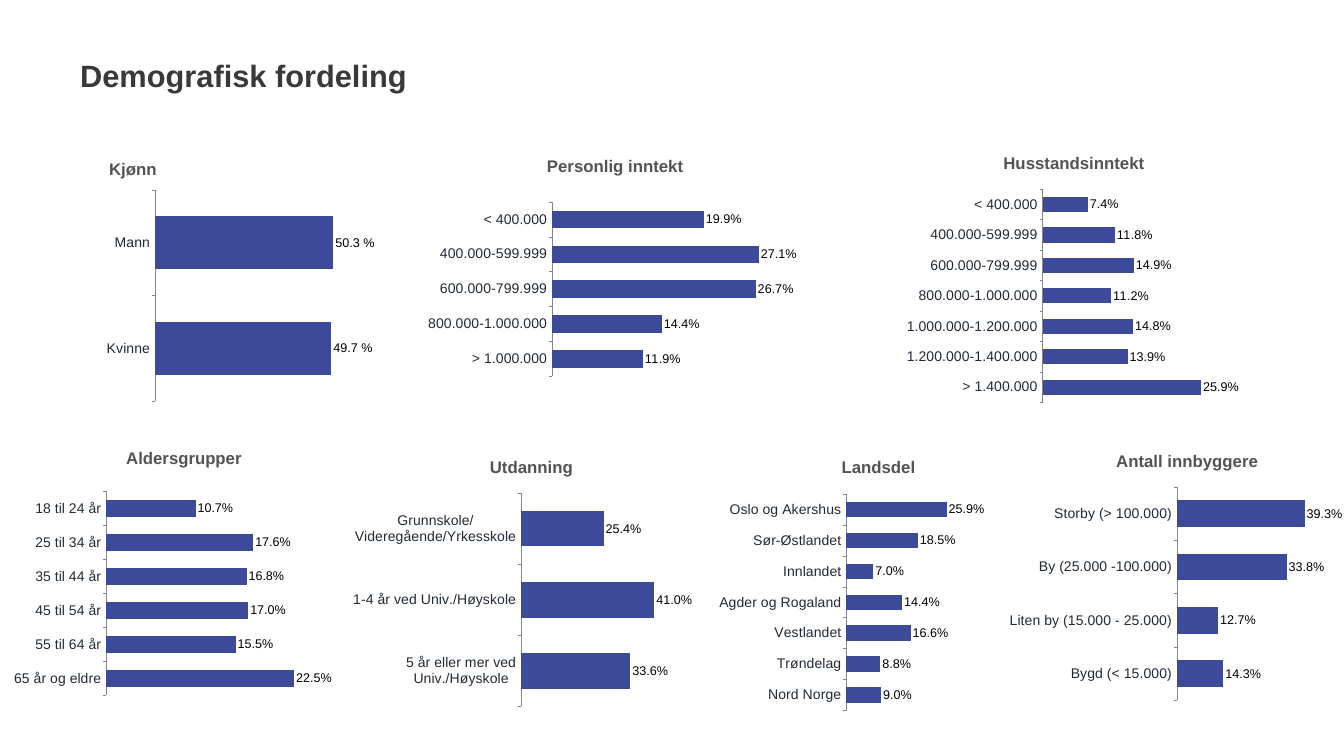
from dataclasses import dataclass

from lxml.etree import SubElement
from pptx import Presentation
from pptx.chart.data import CategoryChartData
from pptx.dml.color import RGBColor
from pptx.enum.chart import XL_CHART_TYPE, XL_LABEL_POSITION, XL_TICK_MARK
from pptx.enum.text import MSO_ANCHOR
from pptx.oxml.ns import qn
from pptx.util import Inches, Pt


@dataclass(frozen=True)
class Theme:
    font: str = "Arial"
    heading: str = "3B3838"
    chart_title: str = "535353"
    category: str = "222A35"
    label: str = "000000"
    axis: str = "868686"
    bar: str = "3D4A9A"
    heading_size: int = 44
    chart_title_size: int = 24
    category_size: int = 20
    label_size: int = 18


@dataclass(frozen=True)
class Panel:
    title: str
    box: tuple
    plot: tuple
    maximum: float
    shares: dict
    series: str = "Series 1"
    number_format: str = "###0.0%"
    title_at: tuple = ()


THEME = Theme()
WIDTH, HEIGHT = Inches(26.67), Inches(15)
COLUMNS = ROWS = 100
HEADING_BOX = (5.74, 3.13, 88.71, 13.6)

PANELS = [
    Panel("Aldersgrupper", (1.05, 56.8, 28.91, 36.2), (23.4, 22.7, 54, 74.5), 0.25,
          {"18 til 24 år": 0.107, "25 til 34 år": 0.176, "35 til 44 år": 0.168,
           "45 til 54 år": 0.17, "55 til 64 år": 0.155, "65 år og eldre": 0.225},
          series="Aldersgrupper", title_at=(27.8, 5.5)),
    Panel("Kjønn", (0, 18.53, 28.91, 35.6), (39.9, 18.5, 54.8, 78.6), 0.6,
          {"Mann": 0.503, "Kvinne": 0.497},
          series="Kjønn", number_format="0.0\\ %", title_at=(27.3, 5.5)),
    Panel("Utdanning", (25.08, 58.87, 28.91, 35.6), (47.4, 17.9, 37.6, 79.2), 0.45,
          {"Grunnskole/Videregående/Yrkesskole": 0.254,
           "1-4 år ved Univ./Høyskole": 0.41,
           "5 år eller mer ved Univ./Høyskole": 0.336}),
    Panel("Personlig inntekt", (31.31, 19, 28.91, 36.2), (33.8, 21.3, 58.9, 63.8), 0.3,
          {"< 400.000": 0.199, "400.000-599.999": 0.271, "600.000-799.999": 0.267,
           "800.000-1.000.000": 0.144, "> 1.000.000": 0.119}),
    Panel("Husstandsinntekt", (65.35, 18.67, 29.1, 35.6), (42, 17.9, 47, 79.2), 0.3,
          {"< 400.000": 0.074, "400.000-599.999": 0.118, "600.000-799.999": 0.149,
           "800.000-1.000.000": 0.112, "1.000.000-1.200.000": 0.148,
           "1.200.000-1.400.000": 0.139, "> 1.400.000": 0.259}),
    Panel("Landsdel", (50.81, 58.93, 29.1, 36.2), (41.8, 17.7, 29.7, 79.2), 0.3,
          {"Oslo og Akershus": 0.259, "Sør-Østlandet": 0.185, "Innlandet": 0.07,
           "Agder og Rogaland": 0.144, "Vestlandet": 0.166, "Trøndelag": 0.088,
           "Nord Norge": 0.09}),
    Panel("Antall innbyggere", (73.87, 58.07, 28.91, 35.6), (47.4, 17.9, 37.6, 79.2), 0.45,
          {"Storby (> 100.000)": 0.393, "By (25.000 -100.000)": 0.338,
           "Liten by (15.000 - 25.000)": 0.127, "Bygd (< 15.000)": 0.143}),
]


def place(box):
    left, top, width, height = box
    return (round(WIDTH * left / COLUMNS), round(HEIGHT * top / ROWS),
            round(WIDTH * width / COLUMNS), round(HEIGHT * height / ROWS))


def style_font(font, size, color, bold=False):
    font.name = THEME.font
    font.size = Pt(size)
    font.bold = bold
    font.color.rgb = RGBColor.from_string(color)


def set_layout(parent, index, shares, inner=False):
    for old in parent.findall(qn("c:layout")):
        parent.remove(old)
    layout = SubElement(parent, qn("c:layout"))
    parent.insert(index, layout)
    manual = SubElement(layout, qn("c:manualLayout"))
    settings = [("layoutTarget", "inner")] if inner else []
    settings += [("xMode", "edge"), ("yMode", "edge")]
    settings += [(key, str(round(share / 100, 3))) for key, share in zip("xywh", shares)]
    for key, value in settings:
        SubElement(manual, qn(f"c:{key}")).set("val", value)


def clear_background(chart):
    space = chart.element
    properties = SubElement(space, qn("c:spPr"))
    SubElement(properties, qn("a:noFill"))
    SubElement(SubElement(properties, qn("a:ln")), qn("a:noFill"))
    space.find(qn("c:chart")).addnext(properties)


def add_heading(page, box):
    shape = page.shapes.add_textbox(*place(box))
    frame = shape.text_frame
    frame.word_wrap = True
    frame.vertical_anchor = MSO_ANCHOR.MIDDLE
    frame.margin_left = frame.margin_right = Inches(0.06)
    frame.margin_top = frame.margin_bottom = Inches(0.06)
    span = frame.paragraphs[0].add_run()
    span.text = "Demografisk fordeling"
    style_font(span.font, THEME.heading_size, THEME.heading, bold=True)


def add_chart_title(chart, panel):
    chart.has_title = True
    title = chart.chart_title
    span = title.text_frame.paragraphs[0].add_run()
    span.text = panel.title
    style_font(span.font, THEME.chart_title_size, THEME.chart_title, bold=True)
    title.include_in_layout = False
    if panel.title_at:
        set_layout(title.element, 1, panel.title_at)


def style_axes(chart, maximum):
    categories = chart.category_axis
    categories.reverse_order = True
    categories.has_major_gridlines = False
    categories.major_tick_mark = XL_TICK_MARK.OUTSIDE
    categories.format.line.color.rgb = RGBColor.from_string(THEME.axis)
    categories.format.line.width = Pt(0.75)
    style_font(categories.tick_labels.font, THEME.category_size, THEME.category)
    values = chart.value_axis
    values.minimum_scale, values.maximum_scale = 0, maximum
    values.has_major_gridlines = False
    values.visible = False


def style_bars(chart, number_format):
    plot = chart.plots[0]
    plot.gap_width, plot.overlap = 100, -10
    plot.vary_by_categories = False
    series = plot.series[0]
    series.invert_if_negative = False
    series.format.fill.solid()
    series.format.fill.fore_color.rgb = RGBColor.from_string(THEME.bar)
    labels = series.data_labels
    labels.show_value = True
    labels.position = XL_LABEL_POSITION.OUTSIDE_END
    labels.number_format = number_format
    labels.number_format_is_linked = False
    style_font(labels.font, THEME.label_size, THEME.label)


def add_panel(page, panel):
    data = CategoryChartData(number_format=panel.number_format)
    data.categories = list(panel.shares)
    data.add_series(panel.series, list(panel.shares.values()))
    chart = page.shapes.add_chart(
        XL_CHART_TYPE.BAR_CLUSTERED, *place(panel.box), data).chart
    chart.has_legend = False
    style_font(chart.font, THEME.label_size, THEME.label)
    clear_background(chart)
    add_chart_title(chart, panel)
    style_axes(chart, panel.maximum)
    style_bars(chart, panel.number_format)
    plot_area = chart.element.find(qn("c:chart")).find(qn("c:plotArea"))
    set_layout(plot_area, 0, panel.plot, inner=True)


def main():
    deck = Presentation()
    deck.slide_width, deck.slide_height = WIDTH, HEIGHT
    page = deck.slides.add_slide(deck.slide_layouts[6])
    add_heading(page, HEADING_BOX)
    for panel in PANELS:
        add_panel(page, panel)
    deck.save("out.pptx")


if __name__ == "__main__":
    main()
